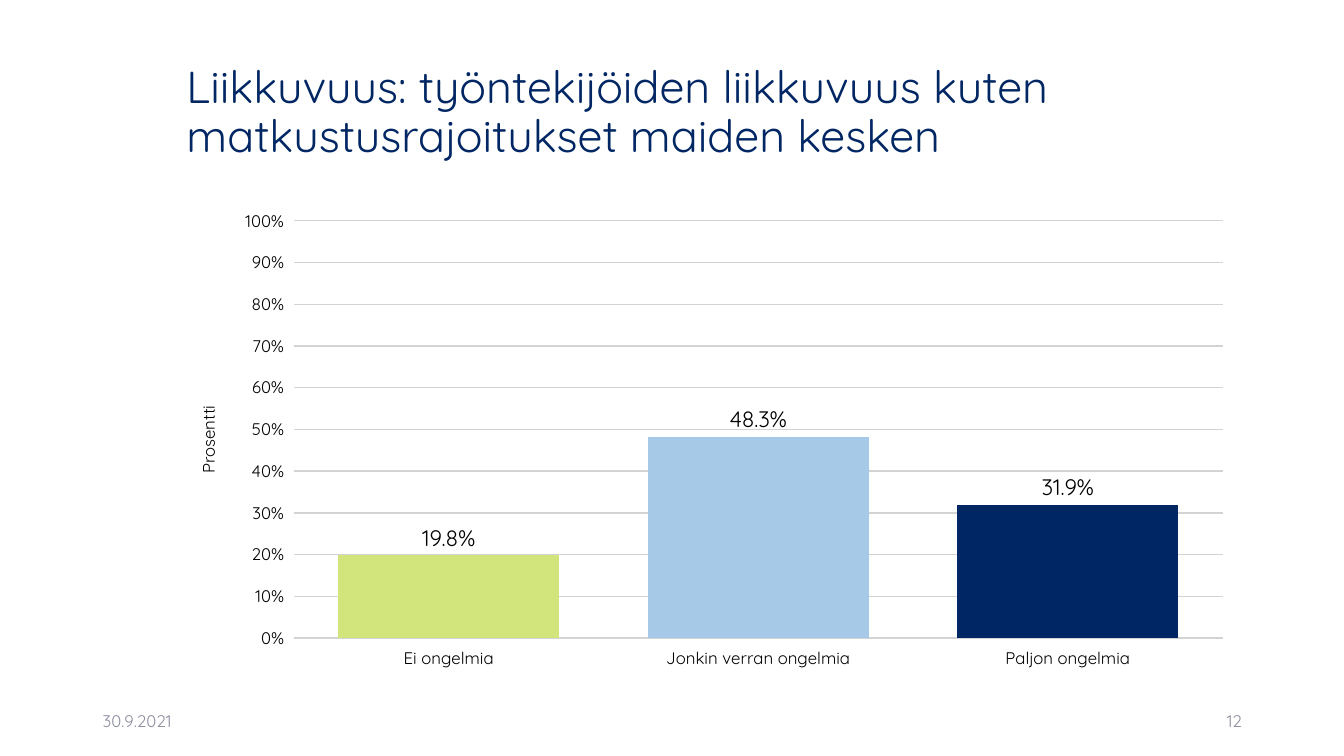
from lxml import etree
from pptx import Presentation
from pptx.chart.data import CategoryChartData
from pptx.dml.color import RGBColor
from pptx.enum.chart import XL_CHART_TYPE, XL_LABEL_POSITION, XL_TICK_MARK
from pptx.enum.text import MSO_ANCHOR, PP_ALIGN
from pptx.oxml.ns import qn
from pptx.util import Cm, Pt

COLUMNS = XL_CHART_TYPE.COLUMN_CLUSTERED
OUTSIDE_END = XL_LABEL_POSITION.OUTSIDE_END
TICK_OUTSIDE = XL_TICK_MARK.OUTSIDE
MIDDLE = MSO_ANCHOR.MIDDLE
LEFT, RIGHT = PP_ALIGN.LEFT, PP_ALIGN.RIGHT


def color(value):
    return RGBColor.from_string(value)


class SurveySlide:
    """Holds the survey style and the slide that receives its elements."""

    font_name = "Quicksand"
    navy, black, white = "002663", "000000", "FFFFFF"
    muted, grid = "8C8E9F", "D3D3D3"
    answer_colors = ("D1E57C", "A5C9E7", navy)

    def __init__(self, slide):
        self.slide = slide

    def style(self, font, size, value):
        font.name = self.font_name
        font.size = Pt(size)
        font.bold = False
        font.color.rgb = color(value)

    def text(self, words, left, top, width, height, size, value, align=LEFT, spacing=1.0):
        frame = self.slide.shapes.add_textbox(Cm(left), Cm(top), Cm(width), Cm(height)).text_frame
        frame.word_wrap = True
        frame.vertical_anchor = MIDDLE
        frame.text = words
        paragraph = frame.paragraphs[0]
        paragraph.alignment = align
        paragraph.line_spacing = spacing
        self.style(paragraph.runs[0].font, size, value)

    def column_chart(self, answers, axis_label, left, top, width, height, plot_area):
        data = CategoryChartData()
        data.categories = list(answers)
        data.add_series("Series 1", list(answers.values()))
        chart = self.slide.shapes.add_chart(
            COLUMNS, Cm(left), Cm(top), Cm(width), Cm(height), data
        ).chart
        chart.has_legend = False
        chart.has_title = False
        self.style(chart.font, 12, self.black)
        self.axes(chart, axis_label)
        self.columns(chart.plots[0])
        self.place_plot(chart, plot_area)

    def axes(self, chart, axis_label):
        for axis in (chart.category_axis, chart.value_axis):
            axis.major_tick_mark = TICK_OUTSIDE
            axis.format.line.fill.background()
            self.style(axis.tick_labels.font, 12, self.black)
        percent = chart.value_axis
        percent.minimum_scale, percent.maximum_scale, percent.major_unit = 0, 1, 0.1
        percent.tick_labels.number_format = "0%"
        percent.tick_labels.number_format_is_linked = False
        percent.major_gridlines.format.line.color.rgb = color(self.grid)
        percent.major_gridlines.format.line.width = Pt(1)
        caption = percent.axis_title.text_frame
        caption.text = axis_label
        self.style(caption.paragraphs[0].runs[0].font, 12, self.black)
        body = percent.axis_title._element.find(".//" + qn("a:bodyPr"))
        body.set("rot", "-5400000")
        body.set("vert", "horz")

    def columns(self, plot):
        plot.gap_width = 40
        plot.vary_by_categories = False
        series = plot.series[0]
        series.format.fill.solid()
        series.format.fill.fore_color.rgb = color(self.answer_colors[0])
        for index, value in enumerate(self.answer_colors[1:], 1):
            fill = series.points[index].format.fill
            fill.solid()
            fill.fore_color.rgb = color(value)
        labels = series.data_labels
        labels.show_value = True
        labels.position = OUTSIDE_END
        labels.number_format = "0.0%"
        labels.number_format_is_linked = False
        self.style(labels.font, 16, self.black)

    def place_plot(self, chart, plot_area):
        area = chart._chartSpace.chart.plotArea
        for automatic in area.findall(qn("c:layout")):
            area.remove(automatic)
        layout = etree.Element(qn("c:layout"))
        area.insert(0, layout)
        manual = etree.SubElement(layout, qn("c:manualLayout"))
        settings = [("layoutTarget", "inner"), ("xMode", "edge"), ("yMode", "edge")]
        for tag, value in settings + list(zip("xywh", plot_area)):
            etree.SubElement(manual, qn("c:" + tag)).set("val", str(value))


def main():
    deck = Presentation()
    deck.slide_width, deck.slide_height = Cm(33.87), Cm(19.05)
    survey = SurveySlide(deck.slides.add_slide(deck.slide_layouts[6]))
    survey.text(
        "Liikkuvuus: työntekijöiden liikkuvuus kuten matkustusrajoitukset maiden kesken",
        4.45, 1.02, 26.9, 3.68, 32, survey.navy, spacing=0.9,
    )
    survey.text("30.9.2021", 2.34, 17.65, 7.62, 1.02, 12, survey.muted)
    survey.text("12", 23.93, 17.65, 7.62, 1.02, 12, survey.muted, RIGHT)
    answers = {"Ei ongelmia": 0.198, "Jonkin verran ongelmia": 0.483, "Paljon ongelmia": 0.319}
    survey.column_chart(answers, "Prosentti", 4.45, 5.08, 26.9, 12.09, (0.11, 0.04, 0.87, 0.87))
    deck.save("out.pptx")


if __name__ == "__main__":
    main()
